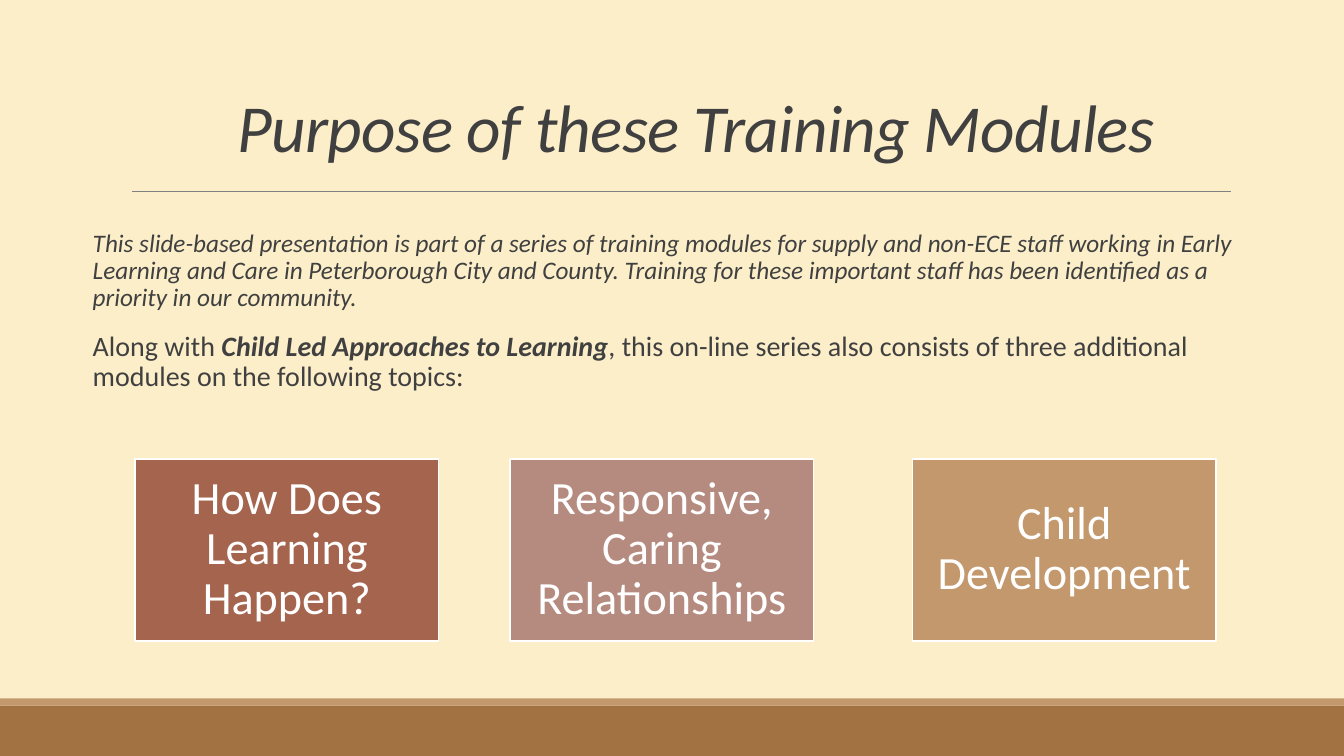
from dataclasses import dataclass

from lxml.etree import SubElement
from pptx import Presentation
from pptx.dml.color import RGBColor
from pptx.enum.shapes import MSO_CONNECTOR, MSO_SHAPE
from pptx.enum.text import MSO_ANCHOR, PP_ALIGN
from pptx.oxml.ns import qn
from pptx.util import Emu, Pt

EMU_PER_PX = 9144  # 100 px to the inch
FONT = "Calibri"
COLOURS = {
    "background": "FBEEC9",
    "footer": "A27242",
    "tan": "C3986D",
    "rule": "808080",
    "text": "404040",
    "rust": "A5644E",
    "rose": "B58B80",
    "white": "FFFFFF",
}


@dataclass(frozen=True)
class Box:
    left: int
    top: int
    width: int
    height: int


@dataclass(frozen=True)
class Span:
    text: str
    size: int
    colour: str = "text"
    bold: bool = False
    italic: bool = False
    tracking: int = 0  # hundredths of a point


@dataclass(frozen=True)
class TopicCard:
    left: int
    colour: str
    topic: str


TITLE = Span("Purpose of these Training Modules", 48, italic=True, tracking=-50)
INTRODUCTION = [
    [Span("This slide-based presentation is part of a series of training modules "
          "for supply and non-ECE staff working in Early Learning and Care in "
          "Peterborough City and County. Training for these important staff has "
          "been identified as a priority in our community.", 18, italic=True)],
    [Span("Along with ", 20),
     Span("Child Led Approaches to Learning", 20, bold=True, italic=True),
     Span(", this on-line series also consists of three additional modules "
          "on the following topics:", 20)],
]
CARDS = [
    TopicCard(134, "rust", "How Does Learning Happen?"),
    TopicCard(506, "rose", "Responsive, Caring Relationships"),
    TopicCard(905, "tan", "Child Development"),
]


def px(length: int) -> Emu:
    return Emu(length * EMU_PER_PX)


def colour_of(name: str) -> RGBColor:
    return RGBColor.from_string(COLOURS[name])


def frame_of(box: Box) -> tuple[Emu, Emu, Emu, Emu]:
    return px(box.left), px(box.top), px(box.width), px(box.height)


def add_rectangle(slide, box: Box, colour: str, outline: str | None = None):
    shape = slide.shapes.add_shape(MSO_SHAPE.RECTANGLE, *frame_of(box))
    shape.shadow.inherit = False
    shape.fill.solid()
    shape.fill.fore_color.rgb = colour_of(colour)
    if outline:
        shape.line.color.rgb = colour_of(outline)
        shape.line.width = Pt(1.25)
    else:
        shape.line.fill.background()
    return shape


def add_rule(slide, left: int, right: int, top: int) -> None:
    rule = slide.shapes.add_connector(
        MSO_CONNECTOR.STRAIGHT, px(left), px(top), px(right), px(top))
    rule.line.color.rgb = colour_of("rule")
    rule.line.width = Pt(0.5)
    SubElement(rule._element.spPr, qn("a:effectLst"))


def write_text(shape, paragraphs: list[list[Span]], anchor: MSO_ANCHOR,
               inset_x: int, inset_y: int, line_spacing: float = 0.9,
               alignment: PP_ALIGN = PP_ALIGN.LEFT) -> None:
    frame = shape.text_frame
    frame.word_wrap = True
    frame.vertical_anchor = anchor
    frame.margin_left = frame.margin_right = px(inset_x)
    frame.margin_top = frame.margin_bottom = px(inset_y)
    for index, spans in enumerate(paragraphs):
        paragraph = frame.add_paragraph() if index else frame.paragraphs[0]
        paragraph.alignment = alignment
        paragraph.line_spacing = line_spacing
        if index:
            paragraph.space_before = Pt(14)
        for span in spans:
            run = paragraph.add_run()
            run.text = span.text
            run.font.name = FONT
            run.font.size = Pt(span.size)
            run.font.bold = span.bold
            run.font.italic = span.italic
            run.font.color.rgb = colour_of(span.colour)
            if span.tracking:
                run._r.get_or_add_rPr().set("spc", str(span.tracking))


def add_topic_card(slide, card: TopicCard) -> None:
    shape = add_rectangle(slide, Box(card.left, 455, 301, 181), card.colour, "white")
    write_text(shape, [[Span(card.topic, 33, "white")]], MSO_ANCHOR.MIDDLE,
               14, 14, alignment=PP_ALIGN.CENTER)


def main() -> None:
    presentation = Presentation()
    presentation.slide_width = px(1333)
    presentation.slide_height = px(750)
    slide = presentation.slides.add_slide(presentation.slide_layouts[6])
    slide.background.fill.solid()
    slide.background.fill.fore_color.rgb = colour_of("background")

    add_rectangle(slide, Box(0, 700, 1333, 50), "footer")
    add_rectangle(slide, Box(0, 693, 1333, 7), "tan")
    add_rule(slide, 131, 1221, 190)

    title = slide.shapes.add_textbox(*frame_of(Box(226, 63, 975, 107)))
    write_text(title, [[TITLE]], MSO_ANCHOR.BOTTOM, 10, 5, line_spacing=0.85)
    introduction = slide.shapes.add_textbox(*frame_of(Box(92, 224, 1166, 240)))
    write_text(introduction, INTRODUCTION, MSO_ANCHOR.TOP, 0, 5)

    for card in CARDS:
        add_topic_card(slide, card)
    presentation.save("out.pptx")


if __name__ == "__main__":
    main()
